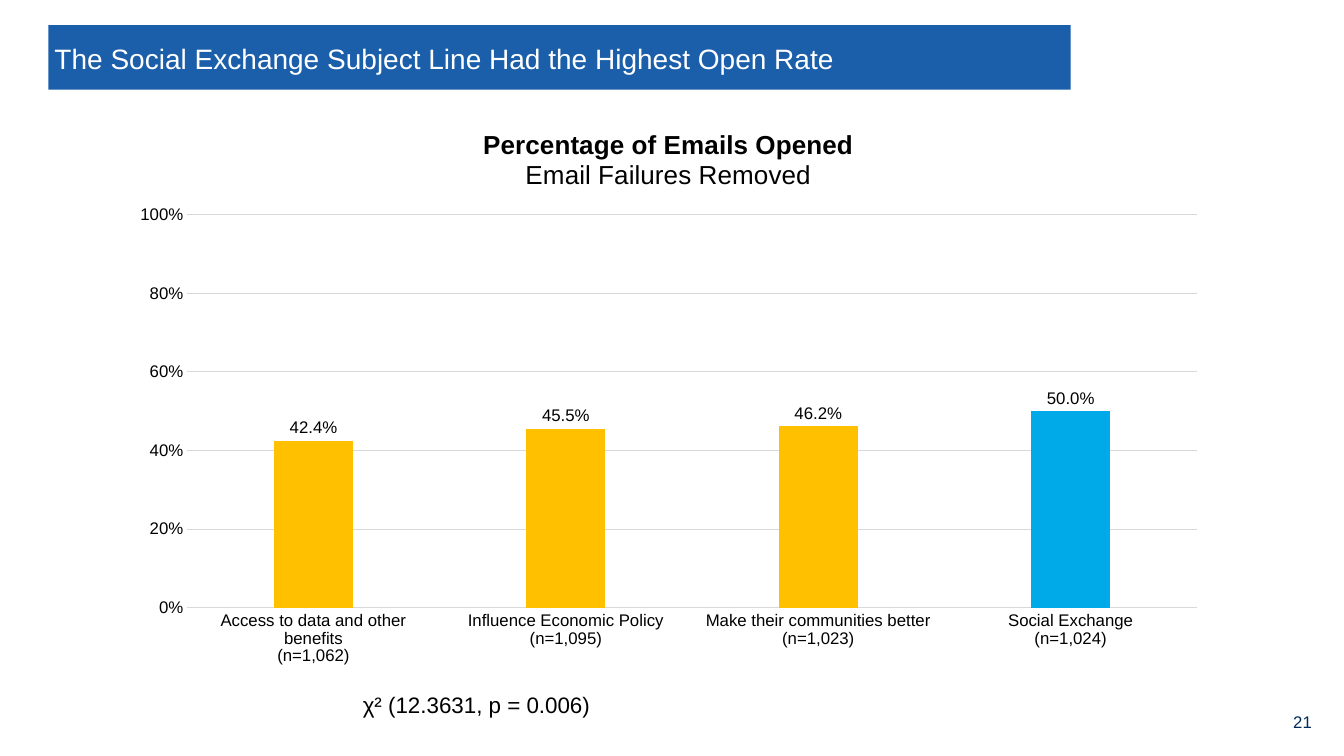
from lxml import etree
from pptx import Presentation
from pptx.chart.data import CategoryChartData
from pptx.dml.color import RGBColor
from pptx.enum.chart import XL_CHART_TYPE, XL_LABEL_POSITION, XL_TICK_MARK
from pptx.enum.shapes import MSO_SHAPE
from pptx.enum.text import MSO_ANCHOR, MSO_AUTO_SIZE, PP_ALIGN
from pptx.oxml.ns import qn
from pptx.util import Inches, Pt

COLUMNS = XL_CHART_TYPE.COLUMN_CLUSTERED
OUTSIDE = XL_LABEL_POSITION.OUTSIDE_END
NO_TICK = XL_TICK_MARK.NONE
RECTANGLE = MSO_SHAPE.RECTANGLE
TOP, MIDDLE = MSO_ANCHOR.TOP, MSO_ANCHOR.MIDDLE
NO_FIT = MSO_AUTO_SIZE.NONE
LEFT, RIGHT = PP_ALIGN.LEFT, PP_ALIGN.RIGHT

FONT = "Arial"
BLACK, WHITE, NAVY, GRAY = "000000", "FFFFFF", "002A59", "D9D9D9"
BANNER, GOLD, SKY = "1B5FAA", "FFC000", "00A9E7"

OPEN_RATES = [
    ("Access to data and other benefits\n(n=1,062)", 0.424),
    ("Influence Economic Policy\n(n=1,095)", 0.455),
    ("Make their communities better\n(n=1,023)", 0.462),
    ("Social Exchange\n(n=1,024)", 0.5),
]


def rgb(color):
    return RGBColor.from_string(color)


def set_font(font, size, color, bold=False):
    font.name = FONT
    font.size = Pt(size)
    font.bold = bold
    font.color.rgb = rgb(color)


def set_fill(fill, color):
    fill.solid()
    fill.fore_color.rgb = rgb(color)


def set_line(line, color):
    line.color.rgb = rgb(color)
    line.width = Pt(0.75)


def place(sp, left, top, width, height):
    sp.left, sp.top = Inches(left), Inches(top)
    sp.width, sp.height = Inches(width), Inches(height)


def write(sp, text, size, color, align=LEFT, anchor=TOP):
    tf = sp.text_frame
    tf.word_wrap = True
    tf.auto_size = NO_FIT
    tf.vertical_anchor = anchor
    p = tf.paragraphs[0]
    p.text = text
    p.alignment = align
    set_font(p.font, size, color)


def add_text(s, box, *args, **kwargs):
    sp = s.shapes.add_textbox(*map(Inches, box))
    write(sp, *args, **kwargs)


def add_banner(s):
    sp = s.shapes.add_shape(
        RECTANGLE, Inches(0.48), Inches(0.25), Inches(10.14), Inches(0.64))
    sp.shadow.inherit = False
    set_fill(sp.fill, BANNER)
    sp.line.fill.background()
    s.shapes._spTree.insert(2, sp._element)


def set_plot_layout(chart, **fractions):
    plot_area = chart._chartSpace.find(".//" + qn("c:plotArea"))
    for old in plot_area.findall(qn("c:layout")):
        plot_area.remove(old)
    layout = etree.Element(qn("c:layout"))
    manual = etree.SubElement(layout, qn("c:manualLayout"))
    settings = {"layoutTarget": "inner", "xMode": "edge", "yMode": "edge"}
    for tag, value in {**settings, **fractions}.items():
        etree.SubElement(manual, qn("c:" + tag)).set("val", str(value))
    plot_area.insert(0, layout)


def format_title(chart):
    chart.has_title = True
    chart.chart_title.include_in_layout = False
    tf = chart.chart_title.text_frame
    tf.text = "Percentage of Emails Opened\nEmail Failures Removed"
    for p, bold in zip(tf.paragraphs, (True, False)):
        set_font(p.font, 18.6, BLACK, bold)


def format_axes(chart):
    for axis in (chart.category_axis, chart.value_axis):
        axis.major_tick_mark = axis.minor_tick_mark = NO_TICK
        set_font(axis.tick_labels.font, 12, BLACK)
    set_line(chart.category_axis.format.line, GRAY)
    axis = chart.value_axis
    axis.minimum_scale, axis.maximum_scale, axis.major_unit = 0, 1, 0.2
    axis.tick_labels.number_format = "0%"
    axis.tick_labels.number_format_is_linked = False
    axis.format.line.fill.background()
    set_line(axis.major_gridlines.format.line, GRAY)


def format_columns(plot):
    plot.gap_width, plot.overlap = 219, -27
    plot.vary_by_categories = False
    series = plot.series[0]
    set_fill(series.format.fill, GOLD)
    set_fill(series.points[3].format.fill, SKY)
    labels = series.data_labels
    labels.show_value = True
    labels.position = OUTSIDE
    labels.number_format = "0.0%"
    labels.number_format_is_linked = False
    set_font(labels.font, 12, BLACK)


def add_open_rate_chart(s):
    data = CategoryChartData(number_format="0.0%")
    data.categories = [name for name, _ in OPEN_RATES]
    data.add_series("Series 1", [rate for _, rate in OPEN_RATES])
    chart = s.shapes.add_chart(
        COLUMNS, Inches(1.17), Inches(1.08), Inches(10.92), Inches(5.63),
        data).chart
    chart.has_legend = False
    set_font(chart.font, 10, NAVY)
    format_title(chart)
    format_axes(chart)
    format_columns(chart.plots[0])
    set_plot_layout(chart, x=0.063, y=0.187, w=0.917, h=0.692)


def main():
    prs = Presentation()
    prs.slide_width, prs.slide_height = Inches(13.33), Inches(7.5)
    s = prs.slides.add_slide(prs.slide_layouts[5])
    add_banner(s)
    title = s.shapes.title
    place(title, 0.44, 0.25, 10.18, 0.66)
    write(title, "The Social Exchange Subject Line Had the Highest Open Rate",
          20, WHITE, anchor=MIDDLE)
    add_open_rate_chart(s)
    add_text(s, (3.5, 6.81, 8.33, 0.37), "χ² (12.3631, p = 0.006)", 16, BLACK)
    add_text(s, (12.44, 7, 0.67, 0.33), "21", 12, NAVY, RIGHT, MIDDLE)
    prs.save("out.pptx")


if __name__ == "__main__":
    main()
